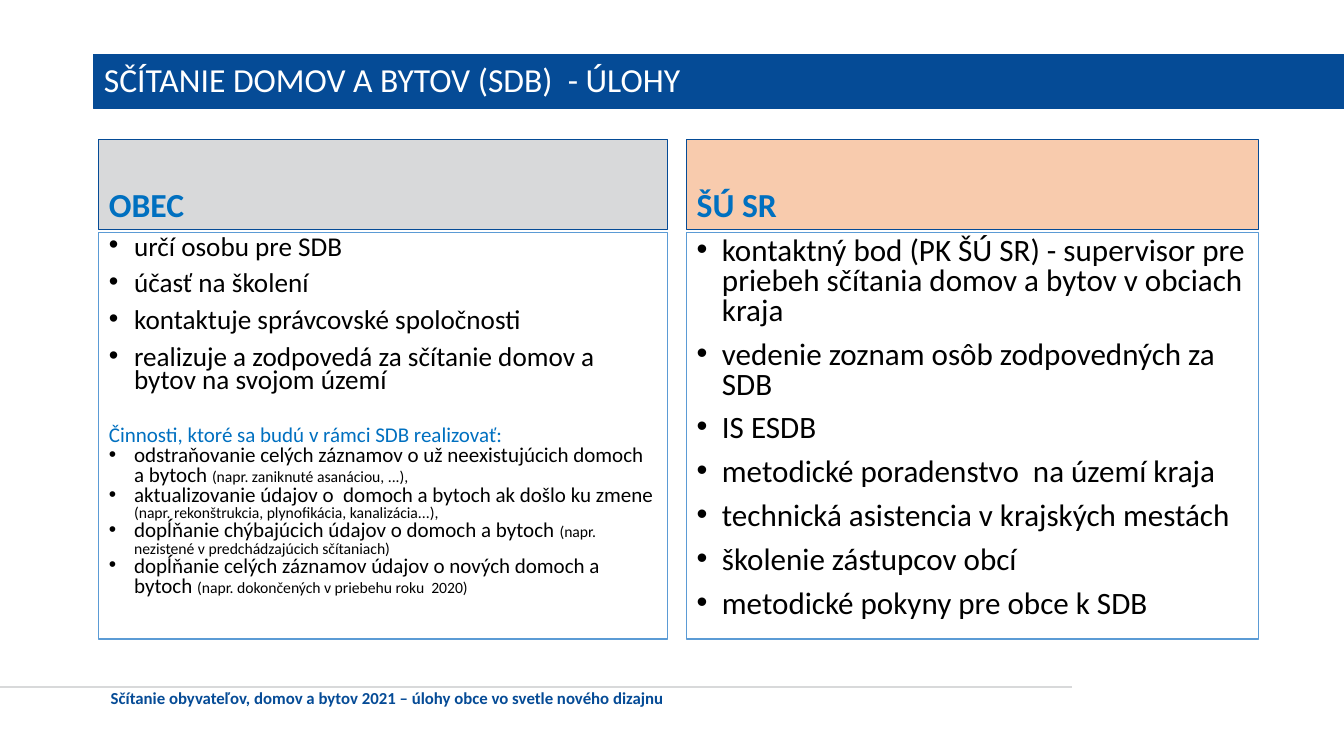
import dataclasses

import lxml.etree
import pptx
import pptx.dml.color
import pptx.enum.shapes
import pptx.enum.text
import pptx.oxml.ns
import pptx.util

ANCHOR = pptx.enum.text.MSO_ANCHOR


@dataclasses.dataclass(frozen=True)
class Theme:
    font: str = "Calibri"
    navy: str = "054B96"
    blue: str = "0070C0"
    frame: str = "5B9BD5"
    grey: str = "D8D9DA"
    peach: str = "F8CBAD"
    black: str = "000000"
    white: str = "FFFFFF"
    heading_size: float = 24
    town_size: float = 19.4
    office_size: float = 22.2
    activity_size: float = 15
    example_size: float = 11.2
    footer_size: float = 12
    paragraph_gap: float = 10
    intro_gap: float = 23
    indent: float = 0.25


def rgb(code):
    return pptx.dml.color.RGBColor.from_string(code)


class SlideBuilder:
    """Places elements on a grid of 100 columns by 100 rows."""

    def __init__(self, deck, layout, theme):
        self.theme = theme
        self.slide = deck.slides.add_slide(layout)
        self.column = deck.slide_width / 100
        self.row = deck.slide_height / 100

    def grid(self, left, top, width, height):
        return (round(left * self.column), round(top * self.row),
                round(width * self.column), round(height * self.row))

    def placeholder(self, index, area, line, fill=None, anchor=ANCHOR.TOP):
        box = self.slide.placeholders[index]
        box.left, box.top, box.width, box.height = self.grid(*area)
        if fill:
            box.fill.solid()
            box.fill.fore_color.rgb = rgb(fill)
        box.line.color.rgb = rgb(line)
        box.line.width = pptx.util.Pt(0.75)
        return self.prepare(box.text_frame, anchor)

    def text_box(self, area):
        frame = self.slide.shapes.add_textbox(*self.grid(*area)).text_frame
        frame.margin_top = 0
        return self.prepare(frame, ANCHOR.TOP)

    def prepare(self, frame, anchor):
        frame.word_wrap = True
        frame.auto_size = pptx.enum.text.MSO_AUTO_SIZE.NONE
        frame.vertical_anchor = anchor
        return frame

    def paragraph(self, frame, text, size, color, spacing=0.9, before=0,
                  bold=False, bullet=False, example=""):
        first = not frame.text
        paragraph = frame.paragraphs[0] if first else frame.add_paragraph()
        paragraph.alignment = pptx.enum.text.PP_ALIGN.LEFT
        paragraph.line_spacing = spacing
        paragraph.space_before = pptx.util.Pt(0 if first else before)
        paragraph.space_after = pptx.util.Pt(0)

        # Bullet and hanging indent
        indent = pptx.util.Inches(self.theme.indent) if bullet else 0
        properties = paragraph._p.get_or_add_pPr()
        properties.set("marL", str(indent))
        properties.set("indent", str(-indent))
        qn = pptx.oxml.ns.qn
        if bullet:
            lxml.etree.SubElement(properties, qn("a:buFont"), typeface="Arial")
            lxml.etree.SubElement(properties, qn("a:buChar"), char="•")
        else:
            lxml.etree.SubElement(properties, qn("a:buNone"))

        font = paragraph.font
        font.name = self.theme.font
        font.size = pptx.util.Pt(size)
        font.bold = bold
        font.color.rgb = rgb(color)
        paragraph.add_run().text = text
        if example:
            note = paragraph.add_run()
            note.text = example
            note.font.size = pptx.util.Pt(self.theme.example_size)

    def rule(self, left, right, row, color, width):
        x1, y, span, _ = self.grid(left, row, right - left, 0)
        rule = self.slide.shapes.add_connector(
            pptx.enum.shapes.MSO_CONNECTOR.STRAIGHT, x1, y, x1 + span, y)
        rule.line.color.rgb = rgb(color)
        rule.line.width = pptx.util.Pt(width)
        lxml.etree.SubElement(rule._element.spPr,
                              pptx.oxml.ns.qn("a:effectLst"))


TOWN_TASKS = [
    "určí osobu pre SDB",
    "účasť na školení",
    "kontaktuje správcovské spoločnosti",
    "realizuje a zodpovedá za sčítanie domov a bytov na svojom území",
]
ACTIVITIES = [
    ("odstraňovanie celých záznamov o už neexistujúcich domoch a bytoch ",
     "(napr. zaniknuté asanáciou, ...),"),
    ("aktualizovanie údajov o  domoch a bytoch ak došlo ku zmene ",
     "(napr. rekonštrukcia, plynofikácia, kanalizácia...),"),
    ("dopĺňanie chýbajúcich údajov o domoch a bytoch ",
     "(napr. nezistené v predchádzajúcich sčítaniach)"),
    ("dopĺňanie celých záznamov údajov o nových domoch a bytoch ",
     "(napr. dokončených v priebehu roku  2020)"),
]
OFFICE_TASKS = [
    "kontaktný bod (PK ŠÚ SR) - supervisor pre priebeh sčítania domov "
    "a bytov v obciach kraja",
    "vedenie zoznam osôb zodpovedných za SDB",
    "IS ESDB",
    "metodické poradenstvo  na území kraja",
    "technická asistencia v krajských mestách",
    "školenie zástupcov obcí",
    "metodické pokyny pre obce k SDB",
]


def main():
    theme = Theme()
    deck = pptx.Presentation()
    deck.slide_width = pptx.util.Inches(13.33)
    deck.slide_height = pptx.util.Inches(7.5)
    comparison = deck.slide_layouts[4]
    builder = SlideBuilder(deck, comparison, theme)

    # Title band
    title = builder.placeholder(0, (6.98, 7.2, 93.02, 7.2), theme.navy,
                                theme.navy, ANCHOR.MIDDLE)
    builder.paragraph(title, "SČÍTANIE DOMOV A BYTOV (SDB)  - ÚLOHY",
                      theme.heading_size, theme.white)

    # Two columns: heading above task list
    columns = [
        ("OBEC", 7.35, 42.31, theme.grey, TOWN_TASKS, theme.town_size, 0.7),
        ("ŠÚ SR", 51.09, 42.54, theme.peach, OFFICE_TASKS,
         theme.office_size, 0.8),
    ]
    task_lists = []
    for number, (name, left, width, fill, tasks, size, spacing) in enumerate(columns):
        heading = builder.placeholder(2 * number + 1, (left, 18.4, width, 12),
                                      theme.navy, fill, ANCHOR.BOTTOM)
        builder.paragraph(heading, name, theme.heading_size, theme.blue,
                          bold=True)
        task_list = builder.placeholder(2 * number + 2,
                                        (left, 30.8, width, 53.73), theme.frame)
        for task in tasks:
            builder.paragraph(task_list, task, size, theme.black, spacing,
                              theme.paragraph_gap, bullet=True)
        task_lists.append(task_list)

    # Activities of the municipality
    town_list = task_lists[0]
    builder.paragraph(town_list, "Činnosti, ktoré sa budú v rámci SDB realizovať:",
                      theme.activity_size, theme.blue, 0.8, theme.intro_gap)
    for activity, example in ACTIVITIES:
        builder.paragraph(town_list, activity, theme.activity_size, theme.black,
                          0.8, bullet=True, example=example)

    # Footer
    builder.rule(0, 79.74, 90.93, theme.grey, 1.5)
    footer = builder.text_box((7.5, 91.33, 72.24, 5.33))
    builder.paragraph(
        footer,
        "Sčítanie obyvateľov, domov a bytov 2021 – úlohy obce vo svetle "
        "nového dizajnu",
        theme.footer_size, theme.navy, bold=True)

    deck.save("out.pptx")


if __name__ == "__main__":
    main()
